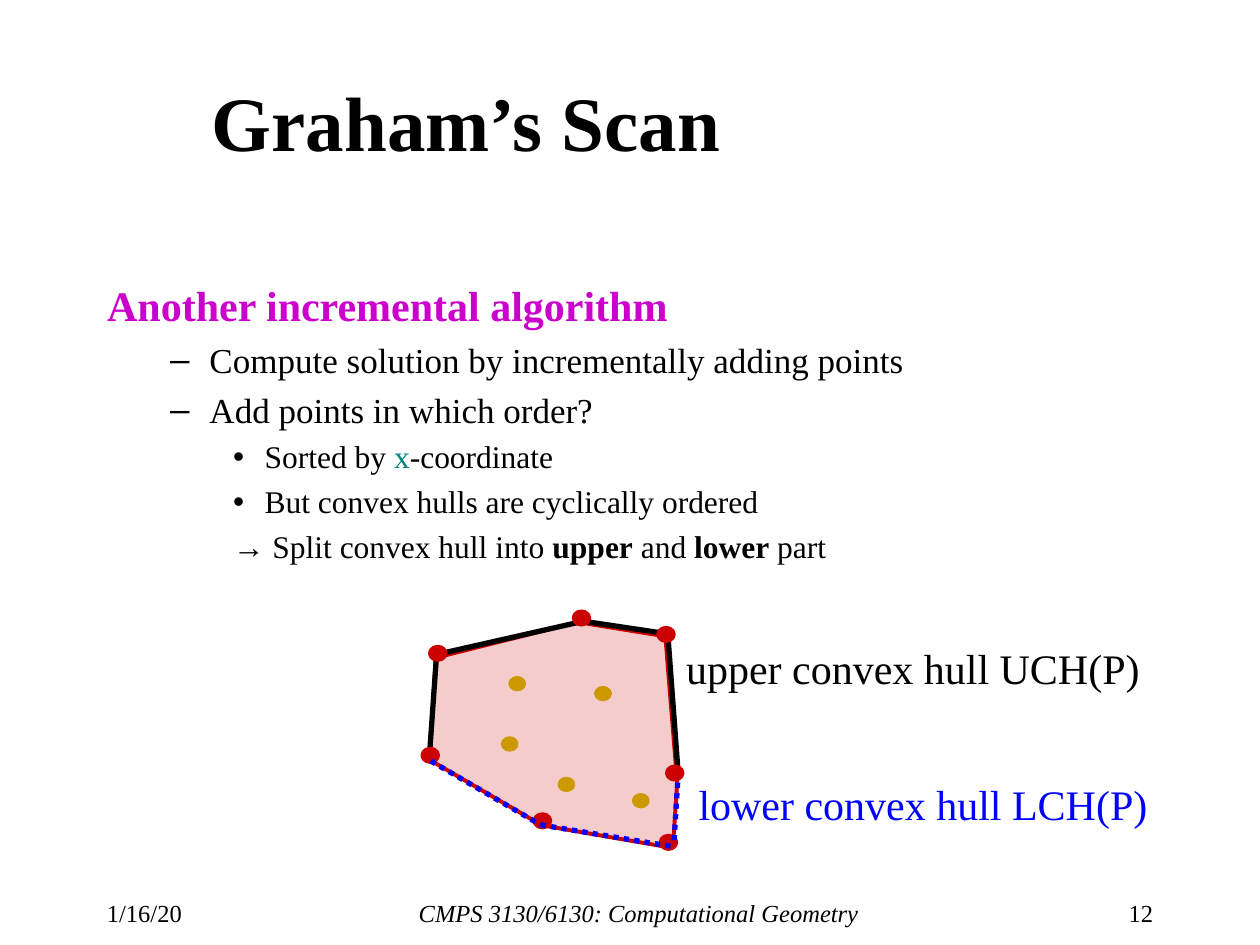
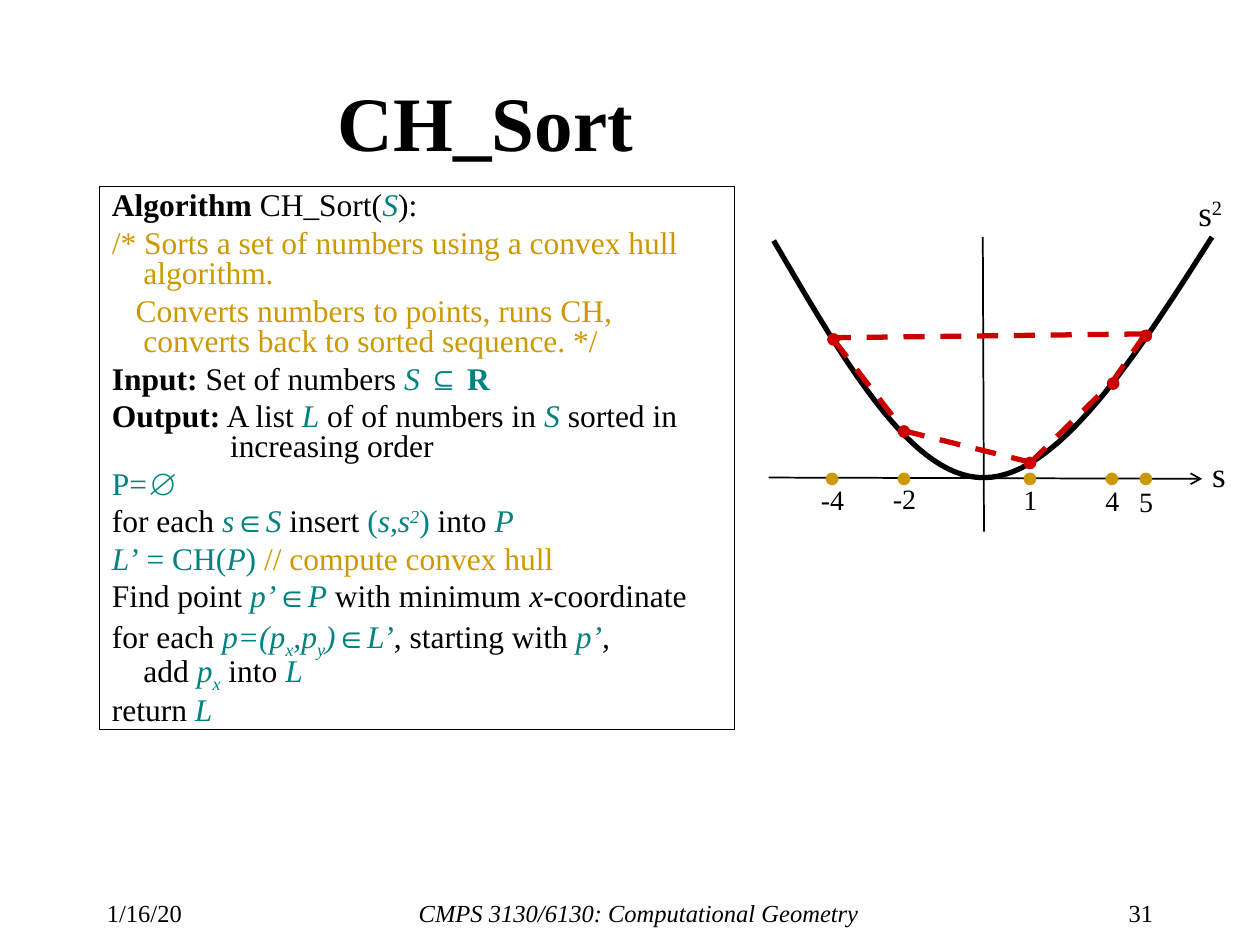
from itertools import pairwise
from lxml.etree import SubElement
from pptx import Presentation
from pptx.dml.color import RGBColor
from pptx.enum.dml import MSO_LINE
from pptx.enum.shapes import MSO_CONNECTOR, MSO_SHAPE
from pptx.enum.text import MSO_ANCHOR, MSO_AUTO_SIZE, PP_ALIGN
from pptx.oxml.ns import qn
from pptx.util import Pt

BLACK, RED, GOLD = "000000", "CC0000", "CC9900"
TEAL, BLUE, PURPLE = "008380", "0000FF", "CC00CC"
FONT = "Times New Roman"
BASE = {"^": "30000", "_": "-25000"}
LEFT, MID, RIGHT = PP_ALIGN.LEFT, PP_ALIGN.CENTER, PP_ALIGN.RIGHT


def color(value):
    return RGBColor.from_string(value)


def write(para, parts, size=18, ink=BLACK, align=LEFT, left=0, first=0,
          before=0, lead=1.0, bullet=None):
    """parts is a string or (text, marks) pairs: b, i, t teal, g gold, ^ and _."""
    para.alignment, para.line_spacing = align, lead
    para.space_before, para.space_after = Pt(before), Pt(0)
    props = para._p.get_or_add_pPr()
    props.set("marL", str(Pt(left)))
    props.set("indent", str(Pt(first)))
    if bullet:
        SubElement(props, qn("a:buChar")).set("char", bullet)
    else:
        SubElement(props, qn("a:buNone"))
    for words, marks in [(parts, "")] if isinstance(parts, str) else parts:
        for row, line in enumerate(words.split("\n")):
            if row:
                para.add_line_break()
            run = para.add_run()
            run.text = line
            font = run.font
            font.name, font.size = FONT, Pt(size)
            font.bold, font.italic = "b" in marks, "i" in marks
            shade = TEAL if "t" in marks else GOLD if "g" in marks else ink
            font.color.rgb = color(shade)
            for mark in BASE.keys() & set(marks):
                run._r.get_or_add_rPr().set("baseline", BASE[mark])


class Deck:
    def __init__(self):
        self.file = Presentation()
        self.file.slide_width, self.file.slide_height = Pt(720), Pt(540)
        self.slide = None

    def start(self, title, number, left=0):
        self.slide = self.file.slides.add_slide(self.file.slide_layouts[1])
        head = self.slide.shapes.title
        self.place(head, 113.8, 23.8, 594, 90)
        head.text_frame.vertical_anchor = MSO_ANCHOR.MIDDLE
        write(head.text_frame.paragraphs[0], [(title, "b")], size=44, left=left)
        self.label("1/16/20", 54, 509.8, 68.4, 18, size=14)
        self.label([("CMPS 3130/6130: Computational Geometry", "i")],
                   136.8, 509.8, 456.5, 18, size=14, align=MID)
        self.label(str(number), 607, 509.8, 59, 18, size=14, align=RIGHT)

    def place(self, shape, x, y, w, h):
        shape.left, shape.top, shape.width, shape.height = map(Pt, (x, y, w, h))
        shape.text_frame.word_wrap = True
        shape.text_frame.auto_size = MSO_AUTO_SIZE.NONE

    def label(self, parts, x, y, w, h, **style):
        box = self.slide.shapes.add_textbox(0, 0, 0, 0)
        self.place(box, x, y, w, h)
        write(box.text_frame.paragraphs[0], parts, **style)

    def fill(self, frame, rows):
        for n, (parts, style) in enumerate(rows):
            para = frame.add_paragraph() if n else frame.paragraphs[0]
            gap = 0.23 * style.get("size", 18) if n else 0
            write(para, parts, **{"before": gap, **style})

    def body(self, rows):
        hold = self.slide.placeholders[1]
        self.place(hold, 54, 156.2, 612, 324)
        self.fill(hold.text_frame, rows)

    def panel(self, x, y, w, h, rows):
        box = self.slide.shapes.add_shape(MSO_SHAPE.RECTANGLE, 0, 0, 0, 0)
        self.place(box, x, y, w, h)
        box.shadow.inherit = False
        box.fill.background()
        box.line.color.rgb, box.line.width = color(BLACK), Pt(0.75)
        box.text_frame.vertical_anchor = MSO_ANCHOR.TOP
        self.fill(box.text_frame, rows)

    def dots(self, spots, ink, w, h, edge=2.25):
        for x, y in spots:
            dot = self.slide.shapes.add_shape(
                MSO_SHAPE.OVAL, Pt(x), Pt(y), Pt(w), Pt(h))
            dot.shadow.inherit = False
            dot.fill.solid()
            dot.fill.fore_color.rgb = dot.line.color.rgb = color(ink)
            dot.line.width = Pt(edge)

    def chain(self, spots, ink, width, dash=None, arrow=False):
        for start, end in pairwise(spots):
            line = self.slide.shapes.add_connector(
                MSO_CONNECTOR.STRAIGHT, *map(Pt, (*start, *end)))
            line.line.color.rgb, line.line.width = color(ink), Pt(width)
            if dash:
                line.line.dash_style = dash
            props = line._element.spPr
            if arrow:
                SubElement(props.find(qn("a:ln")), qn("a:tailEnd")).set("type", "arrow")
            SubElement(props, qn("a:effectLst"))

    def form(self, spots, closed):
        (x, y), *rest = [(Pt(x), Pt(y)) for x, y in spots]
        pen = self.slide.shapes.build_freeform(x, y)
        pen.add_line_segments(rest, close=closed)
        shape = pen.convert_to_shape()
        shape.shadow.inherit = False
        return shape

    def area(self, spots, ink, alpha):
        shape = self.form(spots, True)
        shape.fill.solid()
        shape.fill.fore_color.rgb = color(ink)
        shape.line.fill.background()
        tint = shape._element.spPr.find(qn("a:solidFill"))[0]
        SubElement(tint, qn("a:alpha")).set("val", str(alpha * 1000))

    def curve(self, spots, ink, width):
        shape = self.form(spots, False)
        shape.fill.background()
        shape.line.color.rgb, shape.line.width = color(ink), Pt(width)


def bezier(a, b, c, d, steps=30):
    for n in range(steps + 1):
        t = n / steps
        u = 1 - t
        yield tuple(u**3 * p + 3 * u * u * t * q + 3 * u * t * t * r + t**3 * s
                    for p, q, r, s in zip(a, b, c, d))


def scan(deck):
    deck.start("Graham’s Scan", 12)
    dash = dict(size=20, left=58.5, first=-22.5, bullet="–")
    item = dict(size=18, left=90, first=-18)
    bullet = {**item, "bullet": "•"}
    deck.body([
        ([("Another incremental algorithm", "b")],
         dict(size=24, ink=PURPLE, left=27, first=-27)),
        ("Compute solution by incrementally adding points", dash),
        ("Add points in which order?", dash),
        ([("Sorted by ", ""), ("x", "t"), ("-coordinate", "")], bullet),
        ("But convex hulls are cyclically ordered", bullet),
        ([("→ Split convex hull into ", ""), ("upper", "b"), (" and ", ""),
          ("lower", "b"), (" part", "")], item),
    ])
    deck.area([(332, 355.7), (252, 375.1), (247.7, 377.3), (244.8, 429.8),
               (247, 435.6), (249.8, 437), (306.7, 470.2), (313.9, 472.3),
               (375.1, 483.1), (384.5, 478.1), (387.4, 444.2), (386.6, 439.2),
               (378.7, 363.6)], RED, 20)
    deck.dots([(291.6, 387.4), (362.2, 454.3), (319.7, 445), (340.6, 393.1),
               (287.3, 421.9)], GOLD, 7.9, 6.5)
    deck.chain([(332.6, 355), (249.1, 375.8), (245.5, 434.2), (309.6, 471.6),
                (384.5, 484.6), (387, 447.1), (380.2, 363.6), (335.5, 356.4)],
               RED, 2.25)
    deck.chain([(245.5, 430.6), (249.5, 374), (333.4, 355), (381.6, 362.2),
                (387.4, 439.9)], BLACK, 3)
    deck.dots([(246.2, 370.1), (328.3, 349.9), (241.9, 428.4), (306, 465.8),
               (376.6, 359.3), (381.6, 438.5), (378, 478.1)], RED, 7.9, 6.5, 3.25)
    deck.label("upper convex hull UCH(P)", 374.4, 363.6, 294.5, 36,
               size=24, align=MID)
    for part in ([(246.2, 434.9), (309, 471.4), (384.5, 483.8)],
                 [(385.2, 480.2), (387.4, 445)]):
        deck.chain(part, BLUE, 3, MSO_LINE.ROUND_DOT)
    deck.label("lower convex hull LCH(P)", 380.2, 441.4, 294.5, 36,
               size=24, ink=BLUE, align=MID)


def sort(deck):
    deck.start("CH_Sort", 31, left=72)
    code = dict(left=18, first=-18, lead=0.8)
    deck.panel(56.9, 106.6, 362.9, 310.3, [
        ([("Algorithm ", "b"), ("CH_Sort(", ""), ("S", "ti"), ("):", "")], code),
        ([("/* Sorts a set of numbers using a convex hull\nalgorithm.", "g")], code),
        ([("Converts numbers to points, runs CH, converts back to sorted "
           "sequence. */", "g")], {**code, "first": -4.5}),
        ([("Input:", "b"), (" Set of numbers ", ""), ("S ", "ti"), ("⊆ ", "t"),
          ("R", "tb")], code),
        ([("Output:", "b"), (" A list ", ""), ("L", "ti"),
          (" of of numbers in ", ""), ("S", "ti"), (" sorted in", "")], code),
        ("increasing order", dict(left=67.5, lead=0.8, before=0)),
        ([("P=∅", "t")], code),
        ([("for each ", ""), ("s", "ti"), ("∈", "t"), ("S", "ti"),
          (" insert ", ""), ("(", "t"), ("s", "ti"), (",", "t"), ("s", "ti"),
          ("2", "ti^"), (")", "t"), (" into ", ""), ("P", "ti")], code),
        ([("L’", "ti"), (" = CH(", "t"), ("P", "ti"), (") ", "t"),
          ("// compute convex hull", "g")], code),
        ([("Find point ", ""), ("p’", "ti"), ("∈", "t"), ("P", "ti"),
          (" with minimum ", ""), ("x", "i"), ("-coordinate", "")], code),
        ([("for each ", ""), ("p=(p", "ti"), ("x", "ti_"), (",p", "ti"),
          ("y", "ti_"), (")", "ti"), ("∈", "t"), ("L’", "ti"),
          (", starting with ", ""), ("p’", "ti"), (",\n", "i"), ("add ", ""),
          ("p", "ti"), ("x", "ti_"), (" into ", ""), ("L", "ti")], code),
        ([("return", ""), (" L", "ti")], code),
    ])
    deck.chain([(439.2, 272.9), (686.9, 273.6)], BLACK, 1, arrow=True)
    deck.chain([(562.3, 303.8), (561.6, 135.4)], BLACK, 1)
    low = (562.3, 272.9)
    fall = bezier((442.1, 137.5), (481.7, 205.2), (520.6, 273.6), low)
    rise = bezier(low, (604.1, 272.9), (648.7, 204.5), (692.6, 135.4))
    deck.curve([*fall, *list(rise)[1:]], BLACK, 3)
    deck.label([("s", ""), ("2", "^")], 673.2, 105.8, 36.7, 31, size=20, align=MID)
    deck.label("s", 678.2, 254.9, 36.7, 31, size=20, align=MID)
    ticks = [("-2", 514.1, 271.4), ("-4", 473, 272.2), ("1", 586.1, 272.2),
             ("4", 632.9, 272.9), ("5", 652.3, 273.6)]
    deck.dots([(x, 271.2) for _, x, _ in ticks], GOLD, 5, 5)
    for name, x, y in ticks:
        deck.label(name, x - 12.8, y, 31, 26.6, size=16, align=MID)
    deck.dots([(473.8, 191.5), (514.1, 244.1), (586.1, 262.1), (652.3, 189.4),
               (633.6, 216.7)], RED, 5, 5)
    deck.chain([(476.6, 194.4), (516.6, 246.2), (589, 264.2), (635.4, 218.5),
                (654.5, 190.8), (476.6, 193)], RED, 3, MSO_LINE.DASH)


def main():
    deck = Deck()
    scan(deck)
    sort(deck)
    deck.file.save("out.pptx")


if __name__ == "__main__":
    main()
